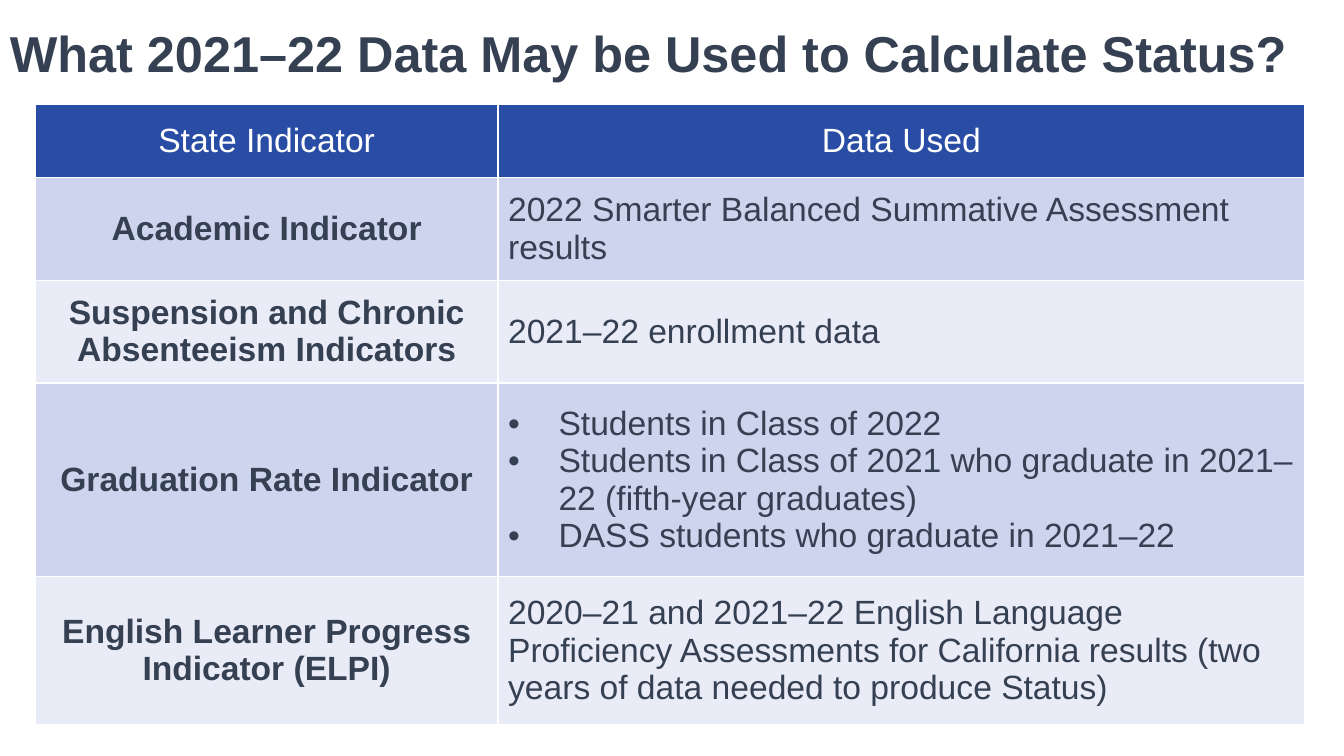
"""Build a slide with a table of the data used for each state indicator."""
from lxml import etree
from pptx import Presentation
from pptx import util as u
from pptx.dml.color import RGBColor
from pptx.enum import text
from pptx.oxml.ns import qn

NAVY = RGBColor(0x35, 0x40, 0x52)
BLUE = RGBColor(0x29, 0x4D, 0xA5)
LILAC = RGBColor(0xCF, 0xD4, 0xEE)
PALE = RGBColor(0xE9, 0xEB, 0xF7)
WHITE = RGBColor(0xFF, 0xFF, 0xFF)

COLS = [4.59, 8]
ROWS = [
    (0.72, "State Indicator", ["Data Used"]),
    (1.02, "Academic Indicator",
     ["2022 Smarter Balanced Summative Assessment results"]),
    (1.02, "Suspension and Chronic Absenteeism Indicators",
     ["2021–22 enrollment data"]),
    (1.92, "Graduation Rate Indicator",
     ["Students in Class of 2022",
      "Students in Class of 2021 who graduate in 2021–22 (fifth-year graduates)",
      "DASS students who graduate in 2021–22"]),
    (1.47, "English Learner Progress Indicator (ELPI)",
     ["2020–21 and 2021–22 English Language Proficiency Assessments for "
      "California results (two years of data needed to produce Status)"]),
]


def style(para, size, color, bold):
    for run in para.runs:
        run.font.name = "Arial"
        run.font.size = u.Pt(size)
        run.font.bold = bold
        run.font.color.rgb = color


def bullet(para):
    props = para._p.get_or_add_pPr()
    props.set("marL", str(u.Inches(0.5)))
    props.set("indent", str(-u.Inches(0.5)))
    etree.SubElement(props, qn("a:buFont")).set("typeface", "Arial")
    etree.SubElement(props, qn("a:buChar")).set("char", "•")


deck = Presentation()
deck.slide_width = u.Inches(13.33)
deck.slide_height = u.Inches(7.5)
slide = deck.slides.add_slide(deck.slide_layouts[6])

title = slide.shapes.add_textbox(0, u.Inches(0.12), deck.slide_width, u.Inches(0.8))
frame = title.text_frame
frame.word_wrap = True
frame.vertical_anchor = text.MSO_ANCHOR.MIDDLE
frame.text = "What 2021–22 Data May be Used to Calculate Status?"
style(frame.paragraphs[0], 36, NAVY, True)

table = slide.shapes.add_table(
    len(ROWS), len(COLS), u.Inches(0.35), u.Inches(1.04),
    u.Inches(sum(COLS)), u.Inches(sum(row[0] for row in ROWS))).table
for col, width in zip(table.columns, COLS):
    col.width = u.Inches(width)

for r, (height, label, data) in enumerate(ROWS):
    table.rows[r].height = u.Inches(height)
    head = r == 0
    for c, lines in enumerate([[label], data]):
        cell = table.cell(r, c)
        cell.fill.solid()
        cell.fill.fore_color.rgb = BLUE if head else LILAC if r % 2 else PALE
        cell.vertical_anchor = text.MSO_ANCHOR.MIDDLE
        cell.text_frame.text = "\n".join(lines)
        for para in cell.text_frame.paragraphs:
            if head or c == 0:
                para.alignment = text.PP_ALIGN.CENTER
            if len(lines) > 1:
                bullet(para)
            style(para, 24, WHITE if head else NAVY, c == 0 and not head)

deck.save("out.pptx")
